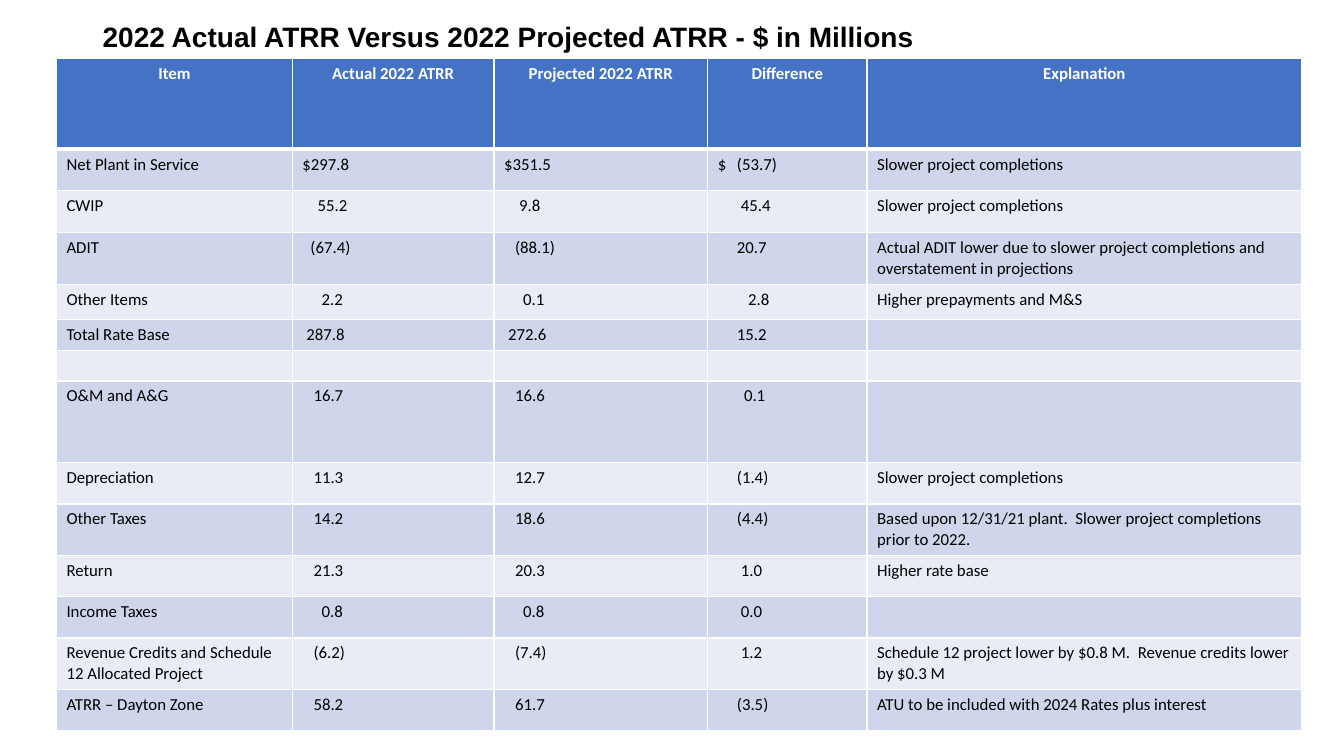
import pptx
import pptx.dml.color
import pptx.enum.text
import pptx.oxml
import pptx.oxml.ns
import pptx.util
from pptx.util import Inches

HEADINGS = ["Item", "Actual 2022 ATRR", "Projected 2022 ATRR", "Difference", "Explanation"]
COLUMN_WIDTHS = [2.34, 2, 2.12, 1.58, 4.31]
HEADER_HEIGHT = 0.9
ATRR_ROWS = [
    (0.41, "Net Plant in Service", ("$297.8", 0), ("$351.5", 0), ("$\t(53.7)", 0),
     "Slower project completions"),
    (0.42, "CWIP", ("55.2", 0.15), ("9.8", 0.15), ("45.4", 0.23),
     "Slower project completions"),
    (0.51, "ADIT", ("(67.4)", 0.08), ("(88.1)", 0.11), ("20.7", 0.19),
     "Actual ADIT lower due to slower project completions and overstatement in projections"),
    (0.35, "Other Items", ("2.2", 0.19), ("0.1", 0.19), ("2.8", 0.3),
     "Higher prepayments and M&S"),
    (0.31, "Total Rate Base", ("287.8", 0.04), ("272.6", 0.04), ("15.2", 0.19), ""),
    (0.3, "", ("", 0), ("", 0), ("", 0), ""),
    (0.81, "O&M and A&G", ("16.7", 0.11), ("16.6", 0.11), ("0.1", 0.26), ""),
    (0.41, "Depreciation", ("11.3", 0.11), ("12.7", 0.11), ("(1.4)", 0.19),
     "Slower project completions"),
    (0.51, "Other Taxes", ("14.2", 0.11), ("18.6", 0.11), ("(4.4)", 0.19),
     "Based upon 12/31/21 plant.  Slower project completions prior to 2022."),
    (0.41, "Return", ("21.3", 0.11), ("20.3", 0.11), ("1.0", 0.23), "Higher rate base"),
    (0.41, "Income Taxes", ("0.8", 0.19), ("0.8", 0.19), ("0.0", 0.23), ""),
    (0.51, "Revenue Credits and Schedule 12 Allocated Project",
     ("(6.2)", 0.11), ("(7.4)", 0.11), ("1.2", 0.23),
     "Schedule 12 project lower by $0.8 M.  Revenue credits lower by $0.3 M"),
    (0.41, "ATRR – Dayton Zone", ("58.2", 0.11), ("61.7", 0.11), ("(3.5)", 0.19),
     "ATU to be included with 2024 Rates plus interest"),
]


def rgb(color):
    """Turn a hex string into a colour."""
    return pptx.dml.color.RGBColor.from_string(color)


def add_run(paragraph, text, font_name, size, color, bold):
    """Add one formatted run to a paragraph."""
    run = paragraph.add_run()
    run.text = text
    run.font.name = font_name
    run.font.size = pptx.util.Pt(size)
    run.font.color.rgb = rgb(color)
    run.font.bold = bold


def add_title(slide, text):
    """Add the slide heading."""
    title = slide.shapes.add_textbox(Inches(0.92), Inches(0.18), Inches(11.5), Inches(0.4))
    frame = title.text_frame
    frame.word_wrap = True
    frame.vertical_anchor = pptx.enum.text.MSO_ANCHOR.MIDDLE
    heading = frame.paragraphs[0]
    heading.line_spacing = 0.9
    add_run(heading, text, "Arial", 20, "000000", True)


def set_borders(cell, top, bottom):
    """Give a cell white borders, one point wide at the sides."""
    properties = cell._tc.get_or_add_tcPr()
    for side, width in (("L", 1), ("R", 1), ("T", top), ("B", bottom)):
        properties.append(pptx.oxml.parse_xml(
            f'<a:ln{side} {pptx.oxml.ns.nsdecls("a")} w="{pptx.util.Pt(width)}">'
            f'<a:solidFill><a:srgbClr val="FFFFFF"/></a:solidFill></a:ln{side}>'))


def add_tab_stop(paragraph, position):
    """Add a left tab stop to a paragraph."""
    paragraph._p.get_or_add_pPr().append(pptx.oxml.parse_xml(
        f'<a:tabLst {pptx.oxml.ns.nsdecls("a")}>'
        f'<a:tab pos="{Inches(position)}" algn="l"/></a:tabLst>'))


def fill_cell(cell, text, indent, fill, color="000000", heading=False, top=1, bottom=1):
    """Write and format one table cell."""
    set_borders(cell, top, bottom)
    cell.fill.solid()
    cell.fill.fore_color.rgb = rgb(fill)
    cell.margin_left = Inches(0.1 + indent)
    paragraph = cell.text_frame.paragraphs[0]
    if heading:
        paragraph.alignment = pptx.enum.text.PP_ALIGN.CENTER
    if not text:
        paragraph._p.append(pptx.oxml.parse_xml(
            f'<a:endParaRPr {pptx.oxml.ns.nsdecls("a")} sz="1200"/>'))
        return
    if "\t" in text:
        add_tab_stop(paragraph, 0.19)
    add_run(paragraph, text, "Calibri", 12, color, heading)


def add_atrr_table(slide):
    """Add the comparison of actual and projected ATRR."""
    heights = [HEADER_HEIGHT] + [row[0] for row in ATRR_ROWS]
    table = slide.shapes.add_table(
        len(heights), len(HEADINGS), Inches(0.56), Inches(0.58),
        Inches(sum(COLUMN_WIDTHS)), Inches(sum(heights))).table
    for column, width in zip(table.columns, COLUMN_WIDTHS):
        column.width = Inches(width)
    for row, height in zip(table.rows, heights):
        row.height = Inches(height)
    for column, heading in enumerate(HEADINGS):
        fill_cell(table.cell(0, column), heading, 0, "4472C4", "FFFFFF", True, bottom=3)
    for number, (_, item, *amounts, explanation) in enumerate(ATRR_ROWS, 1):
        band = "CFD5EA" if number % 2 else "E9EBF5"
        entries = [(item, 0), *amounts, (explanation, 0)]
        for column, (text, indent) in enumerate(entries):
            fill_cell(table.cell(number, column), text, indent, band,
                      top=3 if number == 1 else 1)


def main():
    """Build and save the slide."""
    presentation = pptx.Presentation()
    presentation.slide_width = Inches(13.33)
    presentation.slide_height = Inches(7.5)
    slide = presentation.slides.add_slide(presentation.slide_layouts[6])
    add_title(slide, "2022 Actual ATRR Versus 2022 Projected ATRR - $ in Millions")
    add_atrr_table(slide)
    presentation.save("out.pptx")


if __name__ == "__main__":
    main()
